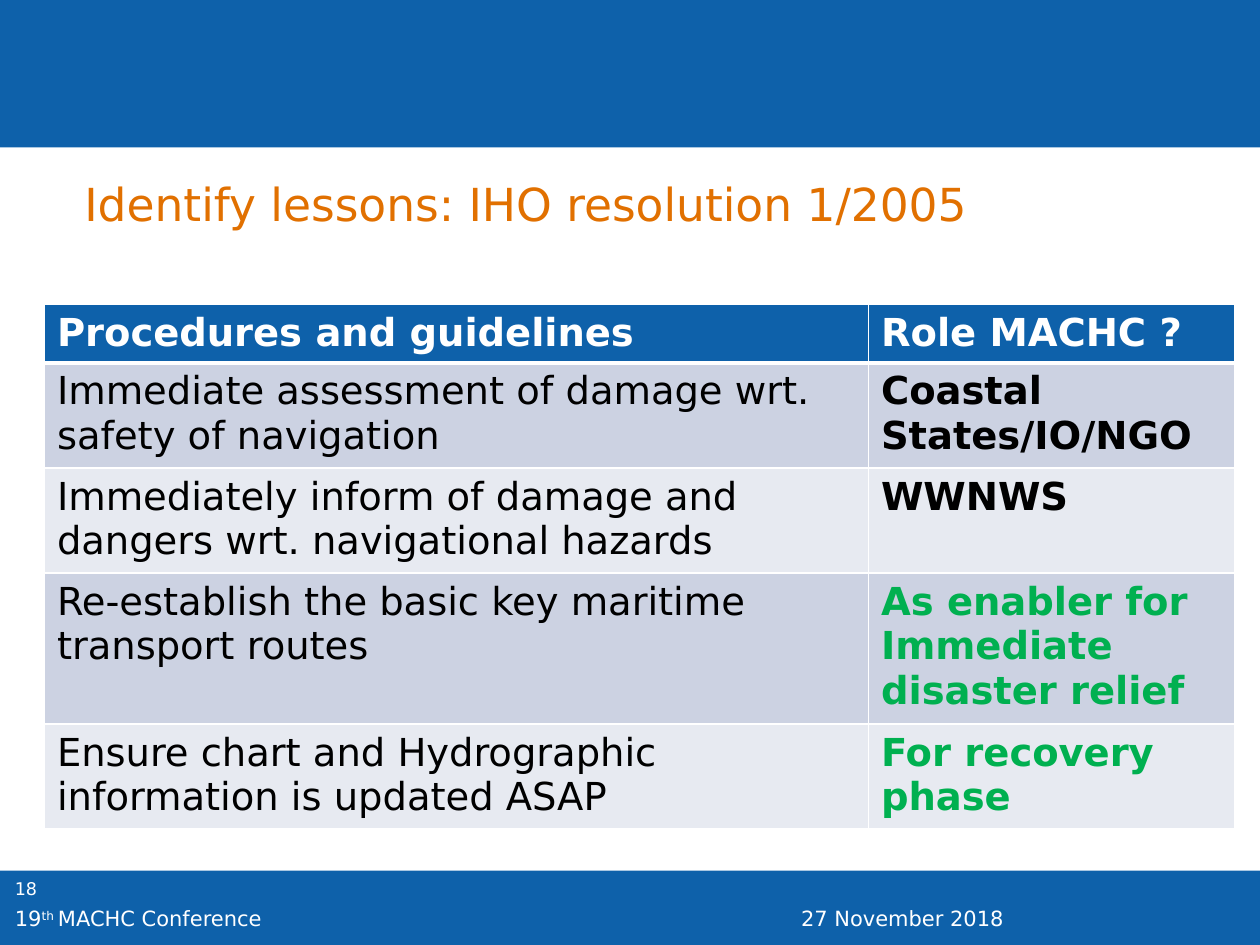
from pptx import Presentation
from pptx.dml.color import RGBColor
from pptx.enum.shapes import MSO_SHAPE
from pptx.enum.text import MSO_ANCHOR, MSO_AUTO_SIZE, PP_ALIGN
from pptx.oxml import parse_xml
from pptx.oxml.ns import nsdecls
from pptx.util import Pt

RECT = MSO_SHAPE.RECTANGLE
TOP = MSO_ANCHOR.TOP
LEFT = PP_ALIGN.LEFT
NO_FIT = MSO_AUTO_SIZE.NONE
FACE = "DejaVu Sans"
COLORS = {
    "blue": "0E61AA", "white": "FFFFFF", "orange": "E17000",
    "black": "000000", "green": "00B050",
    "dark": "CCD2E2", "light": "E7EAF1",
}
WIDTH, HEIGHT = 720, 540
COLS = [470.9, 209.5]
TALL = 58.3
ROWS = [  # height, procedure, role, role colour
    (32, "Procedures and guidelines", "Role MACHC ?", "white"),
    (TALL, "Immediate assessment of damage wrt. safety of navigation",
     "Coastal States/IO/NGO", "black"),
    (TALL, "Immediately inform of damage and dangers wrt. navigational hazards",
     "WWNWS", "black"),
    (84, "Re-establish the basic key maritime transport routes",
     "As enabler for Immediate disaster relief", "green"),
    (TALL, "Ensure chart and Hydrographic information is updated ASAP",
     "For recovery phase", "green"),
]


def rgb(name):
    return RGBColor.from_string(COLORS[name])


def style(font, color, size, bold=False):
    for key, value in {"name": FACE, "size": Pt(size), "bold": bold}.items():
        setattr(font, key, value)
    font.color.rgb = rgb(color)


def add_band(slide, top, height):
    band = slide.shapes.add_shape(RECT, 0, Pt(top), Pt(WIDTH), Pt(height))
    band.shadow.inherit = False
    band.fill.solid()
    band.fill.fore_color.rgb = rgb("blue")
    band.line.fill.background()


def add_label(slide, box, size, parts):
    """Add one line of white text from (text, is superscript) parts."""
    frame = slide.shapes.add_textbox(*map(Pt, box)).text_frame
    frame.word_wrap = True
    for text, raised in parts:
        run = frame.paragraphs[0].add_run()
        run.text = text
        style(run.font, "white", size)
        if raised:
            run.font._element.set("baseline", "30000")


def set_title(slide, text):
    title = slide.shapes.title
    place = {"left": 48.2, "top": 100.5, "width": 612, "height": 63.4}
    for key, value in place.items():
        setattr(title, key, Pt(value))
    frame = title.text_frame
    frame.text = text
    form = {
        "margin_left": 0, "margin_top": 0, "margin_right": 0,
        "margin_bottom": 0, "vertical_anchor": TOP,
        "word_wrap": True, "auto_size": NO_FIT,
    }
    for key, value in form.items():
        setattr(frame, key, value)
    para = frame.paragraphs[0]
    para.alignment = LEFT
    style(para.runs[0].font, "orange", 26)


def set_edges(cell, top, bottom):
    """Draw white cell borders, which must come before the fill."""
    props = cell._tc.get_or_add_tcPr()
    for side, width in {"L": 1, "R": 1, "T": top, "B": bottom}.items():
        props.append(parse_xml(
            f'<a:ln{side} {nsdecls("a")} w="{Pt(width)}"><a:solidFill>'
            f'<a:srgbClr val="{COLORS["white"]}"/>'
            f'</a:solidFill></a:ln{side}>'))


def fill_cell(cell, text, color, bold, back, top, bottom):
    set_edges(cell, top, bottom)
    cell.fill.solid()
    cell.fill.fore_color.rgb = rgb(back)
    cell.text = text
    style(cell.text_frame.paragraphs[0].runs[0].font, color, 22, bold)


def add_grid(slide):
    high = sum(row[0] for row in ROWS)
    table = slide.shapes.add_table(
        len(ROWS), len(COLS), Pt(25.4), Pt(173.8),
        Pt(sum(COLS)), Pt(high)).table
    for col, width in zip(table.columns, COLS):
        col.width = Pt(width)
    for i, (height, task, role, color) in enumerate(ROWS):
        table.rows[i].height = Pt(height)
        head = i == 0
        back = "blue" if head else "dark" if i % 2 else "light"
        edges = (3 if i == 1 else 1, 3 if head else 1)
        ink = "white" if head else "black"
        fill_cell(table.cell(i, 0), task, ink, head, back, *edges)
        fill_cell(table.cell(i, 1), role, color, True, back, *edges)


def main():
    deck = Presentation()
    deck.slide_width, deck.slide_height = Pt(WIDTH), Pt(HEIGHT)
    slide = deck.slides.add_slide(deck.slide_layouts[5])
    add_band(slide, 497.5, 42.5)
    add_band(slide, 0, 84.3)
    add_label(slide, (1.4, 498.2, 56.2, 28.8), 10, [("18", False)])
    add_label(slide, (450.7, 514.1, 269.3, 17.3), 12,
              [("27 November 2018", False)])
    add_label(slide, (1.4, 514.1, 315.4, 17.3), 12,
              [("19", False), ("th ", True), ("MACHC Conference", False)])
    set_title(slide, "Identify lessons: IHO resolution 1/2005")
    add_grid(slide)
    deck.save("out.pptx")


if __name__ == "__main__":
    main()
